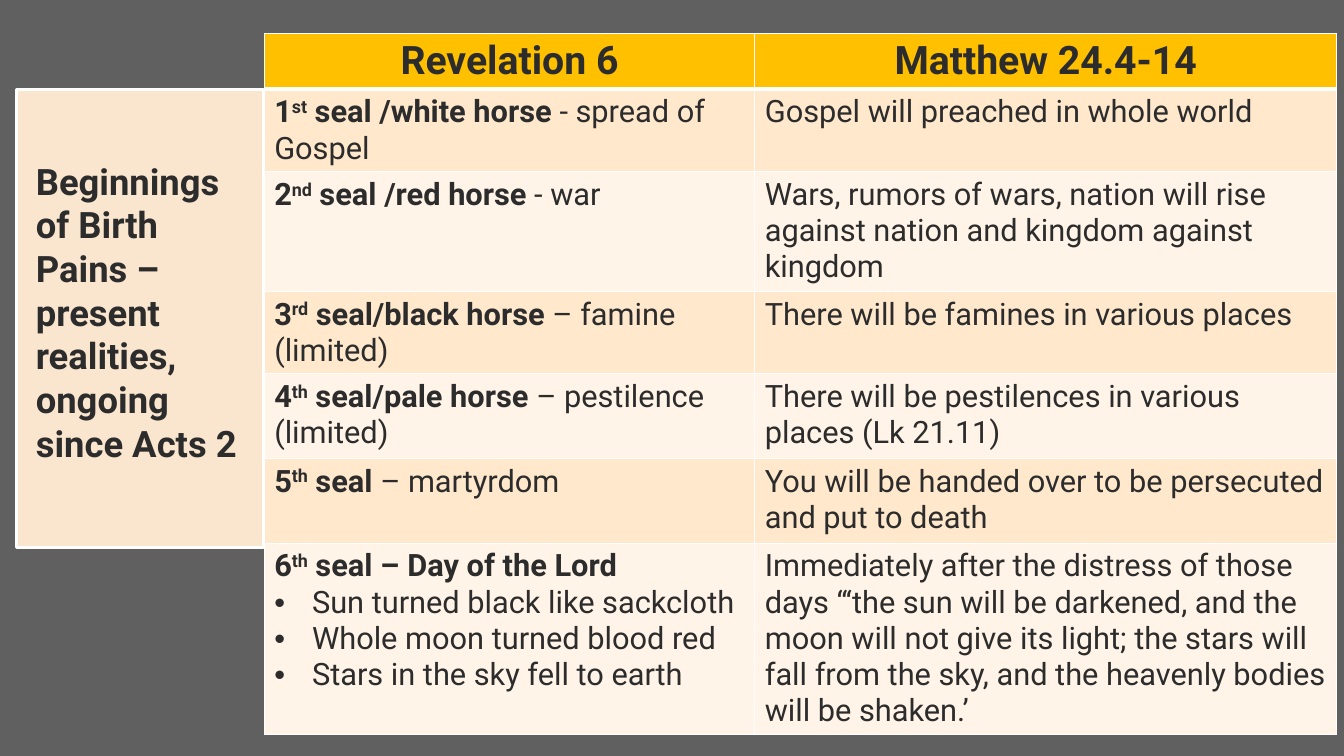
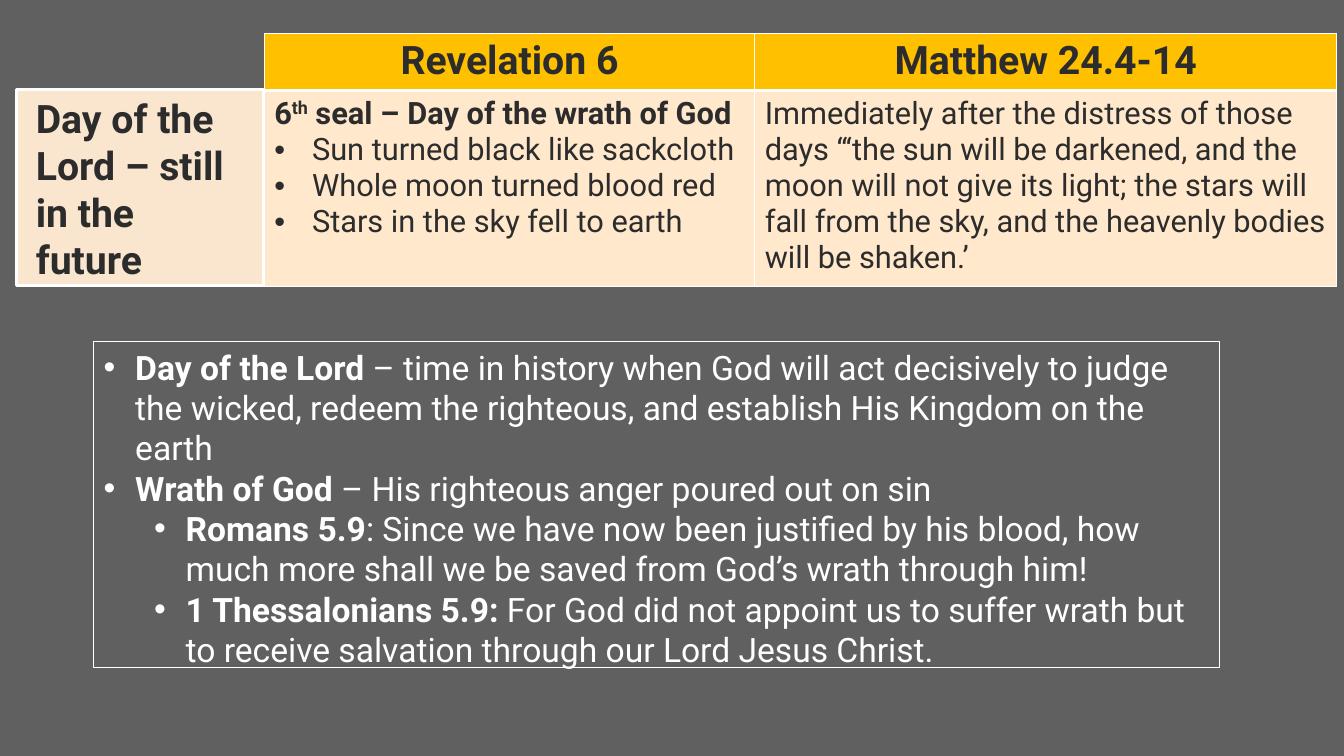
from dataclasses import dataclass

from lxml import etree
from pptx import Presentation
from pptx.dml.color import RGBColor as RGB
from pptx.enum.shapes import MSO_SHAPE as SHAPE
from pptx.enum.text import MSO_ANCHOR as ANCHOR, PP_ALIGN as ALIGN
from pptx.oxml.ns import qn
from pptx.util import Pt


@dataclass(frozen=True)
class Theme:
    """Colours, font and type sizes shared by the slides."""
    font: str = "Roboto"
    page: str = "606060"
    ink: str = "2C2C2C"
    white: str = "FFFFFF"
    header: str = "FFC000"
    label: str = "FAE5CE"
    bands: tuple = ("FFE8CC", "FFF4E7")
    title_pt: int = 28
    label_pt: int = 26
    note_pt: int = 24
    body_pt: int = 22


T = Theme()
HEADINGS = ("*Revelation 6*", "*Matthew 24.4-14*")
TABLE_BOX = (188.7, 23.8, 766, 39.8)
COLUMN_SHARE = (0.4575, 0.5425)
SIGNS = (
    "• Sun turned black like sackcloth",
    "• Whole moon turned blood red",
    "• Stars in the sky fell to earth",
)
DISTRESS = (
    "Immediately after the distress of those days “‘the sun will be darkened, "
    "and the moon will not give its light; the stars will fall from the sky, "
    "and the heavenly bodies will be shaken.’"
)
SEALS = (
    (58.5, ("*1^st^ seal /white horse *- spread of Gospel",),
     "Gospel will preached in whole world"),
    (85.5, ("*2^nd^ seal /red horse *- war",),
     "Wars, rumors of wars, nation will rise against nation and kingdom "
     "against kingdom"),
    (58.5, ("*3^rd^ seal/black horse *– famine (limited)",),
     "There will be famines in various places"),
    (60.5, ("*4^th^ seal/pale horse *– pestilence (limited)",),
     "There will be pestilences in various places (Lk 21.11)"),
    (60.5, ("*5^th^ seal *– martyrdom",),
     "You will be handed over to be persecuted and put to death"),
    (136.5, ("*6^th^ seal – Day of the Lord*", *SIGNS), DISTRESS),
)
WRATH = ((140, ("*6^th^ seal – Day of the wrath of God*", *SIGNS), DISTRESS),)
DEFINITIONS = (
    "• *Day of the Lord *– time in history when God will act decisively to "
    "judge the wicked, redeem the righteous, and establish His Kingdom on "
    "the earth",
    "• *Wrath of God *– His righteous anger poured out on sin",
    "•• *Romans 5.9*: Since we have now been justified by his blood, how much "
    "more shall we be saved from God’s wrath through him!",
    "•• *1 Thessalonians 5.9:* For God did not appoint us to suffer wrath but "
    "to receive salvation through our Lord Jesus Christ.",
)


def add_bullet(p, level, indent):
    """Give a paragraph a hanging round bullet."""
    p.level = level
    pPr = p._p.get_or_add_pPr()
    pPr.set("marL", str(Pt(indent + 36 * level)))
    pPr.set("indent", str(-Pt(indent)))
    etree.SubElement(pPr, qn("a:buFont")).set("typeface", "Arial")
    etree.SubElement(pPr, qn("a:buChar")).set("char", "•")


def write(tf, lines, size=T.body_pt, color=T.ink, align=ALIGN.LEFT, indent=27):
    """Write lines where * toggles bold, ^ toggles superscript, • bullets."""
    tf.word_wrap = True
    for i, line in enumerate(lines):
        p = tf.add_paragraph() if i else tf.paragraphs[0]
        p.alignment = align
        text = line.lstrip("•")
        depth = len(line) - len(text)
        if depth:
            add_bullet(p, depth - 1, indent)
            text = text.lstrip()
        for j, span in enumerate(text.split("*")):
            for k, part in enumerate(span.split("^")):
                if not part:
                    continue
                r = p.add_run()
                r.text = part
                f = r.font
                f.name, f.size, f.bold = T.font, Pt(size), j % 2 == 1
                f.color.rgb = RGB.from_string(color)
                if k % 2:
                    r._r.get_or_add_rPr().set("baseline", "30000")


def add_rect(s, box, line_pt, fill=None):
    """Add a white-edged rectangle."""
    sp = s.shapes.add_shape(SHAPE.RECTANGLE, *map(Pt, box))
    sp.shadow.inherit = False
    if fill:
        sp.fill.solid()
        sp.fill.fore_color.rgb = RGB.from_string(fill)
    else:
        sp.fill.background()
    sp.line.color.rgb = RGB.from_string(T.white)
    sp.line.width = Pt(line_pt)
    return sp


def style_cell(cell, fill, **borders):
    """Fill a cell and draw white borders of the given widths."""
    cell.fill.solid()
    cell.fill.fore_color.rgb = RGB.from_string(fill)
    tcPr = cell._tc.get_or_add_tcPr()
    for i, (side, width) in enumerate(borders.items()):
        ln = etree.Element(qn(f"a:ln{side}"), w=str(Pt(width)))
        solid = etree.SubElement(ln, qn("a:solidFill"))
        etree.SubElement(solid, qn("a:srgbClr")).set("val", T.white)
        tcPr.insert(i, ln)


def add_comparison(s, box, rows):
    """Add the two-column table of parallel passages."""
    x, y, w, head_h = box
    height = head_h + sum(row[0] for row in rows)
    table = s.shapes.add_table(len(rows) + 1, 2, *map(Pt, (x, y, w, height))).table
    table.horz_banding = False
    table.rows[0].height = Pt(head_h)
    for col, (share, heading) in enumerate(zip(COLUMN_SHARE, HEADINGS)):
        table.columns[col].width = Pt(round(w * share, 2))
        cell = table.cell(0, col)
        style_cell(cell, T.header, L=1, R=1, T=1, B=3)
        write(cell.text_frame, [heading], size=T.title_pt, align=ALIGN.CENTER)
    for i, (h, seal, gospel) in enumerate(rows, 1):
        table.rows[i].height = Pt(h)
        for col, lines in enumerate((seal, [gospel])):
            cell = table.cell(i, col)
            style_cell(cell, T.bands[(i - 1) % 2], L=1, R=1, T=3 if i == 1 else 1, B=1)
            write(cell.text_frame, lines)


def add_label(s, box, text, size, text_top, text_h):
    """Add the side label panel with its text box."""
    x, y, w, _ = box
    add_rect(s, box, 2.25, T.label)
    tb = s.shapes.add_textbox(*map(Pt, (x + 7, y + text_top, w - 13.5, text_h)))
    write(tb.text_frame, [f"*{text}*"], size=size)


def add_definitions(s, box):
    """Add the outlined box of definitions."""
    tf = add_rect(s, box, 0.75).text_frame
    tf.vertical_anchor = ANCHOR.TOP
    write(tf, DEFINITIONS, size=T.note_pt, color=T.white, indent=22.5)


def add_slide(prs, rows):
    """Add a slide with its background and comparison table."""
    s = prs.slides.add_slide(prs.slide_layouts[6])
    s.background.fill.solid()
    s.background.fill.fore_color.rgb = RGB.from_string(T.page)
    add_comparison(s, TABLE_BOX, rows)
    return s


def main():
    """Build and save the presentation."""
    prs = Presentation()
    prs.slide_width, prs.slide_height = Pt(960), Pt(540)
    s = add_slide(prs, SEALS)
    add_label(s, (11.5, 64, 177, 327),
              "Beginnings of Birth Pains – present realities, ongoing since Acts 2",
              T.label_pt, 46, 227.5)
    s = add_slide(prs, WRATH)
    add_label(s, (11.5, 64, 177, 140), "Day of the Lord – still in the future",
              T.title_pt, 0, 143)
    add_definitions(s, (67, 244, 804, 232.5))
    prs.save("out.pptx")


if __name__ == "__main__":
    main()
